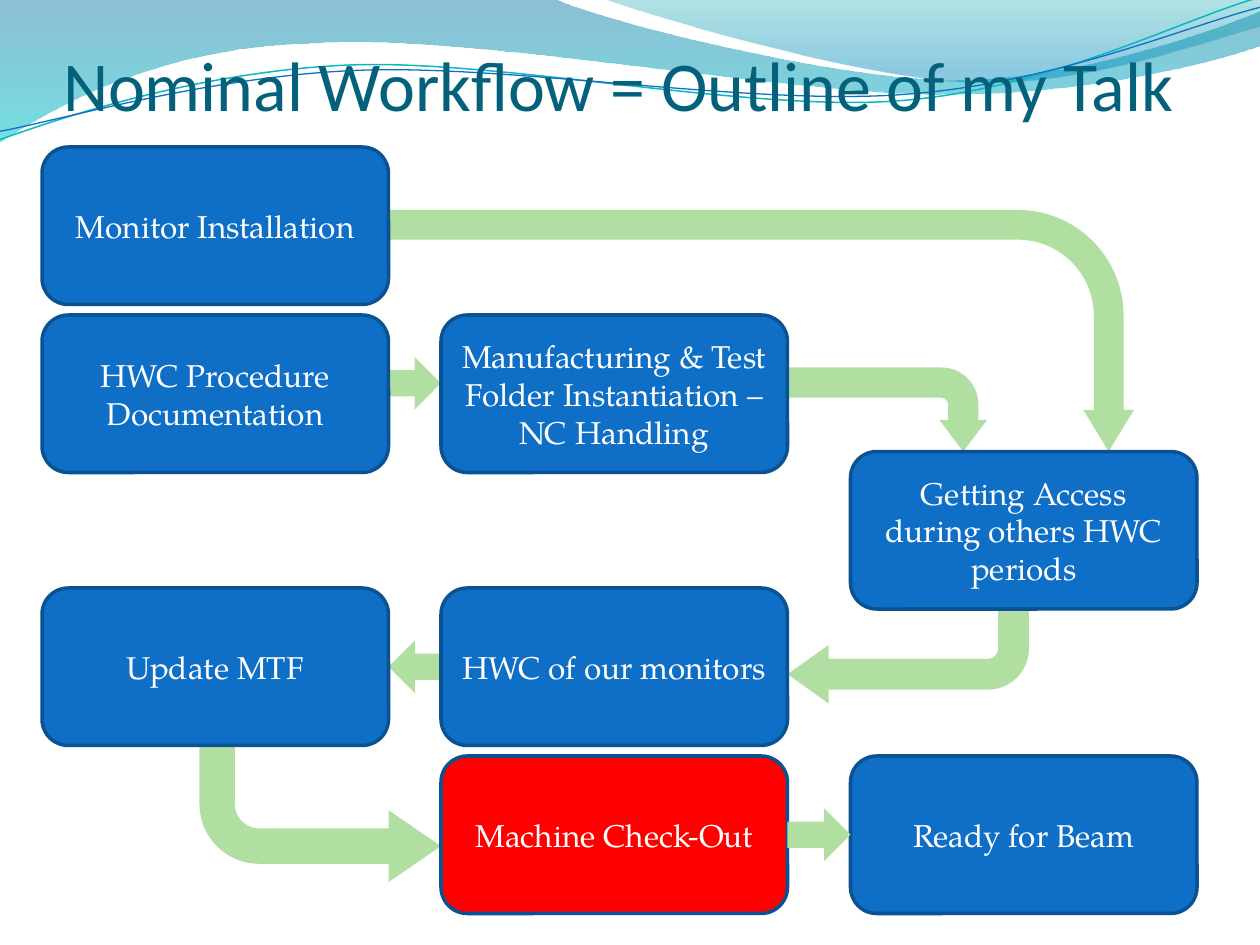
import dataclasses
import math

import lxml.etree
import pptx
import pptx.dml.color
import pptx.enum.shapes
import pptx.enum.text
import pptx.oxml.ns
import pptx.util

PX = 7620  # EMU per px, 120 px to the inch
SHAPE = pptx.enum.shapes.MSO_SHAPE


@dataclasses.dataclass(frozen=True)
class Theme:
    title: str = "04617B"
    step: str = "0F6FC6"
    current_step: str = "FF0000"
    step_border: str = "0B5292"
    step_text: str = "FFFFFF"
    arrow: str = "B0DFA1"
    teal_line: str = "0AB8BF"
    left_wave: tuple = ((0, "0074A1", 45), (1, "00C6CF", 55))
    right_wave: tuple = ((0, "00A1A9", 30), (0.8, "008BBF", 45))
    title_font: str = "Calibri"
    step_font: str = "TeX Gyre Pagella"
    title_size: int = 40
    step_size: int = 18


THEME = Theme()
STEP_W, STEP_H = 330, 150
COLUMNS = (40, 420, 810)
ROWS = (140, 300, 430, 560, 720)
# column, row, wording
STEPS = (
    (0, 0, "Monitor Installation"),
    (0, 1, "HWC Procedure Documentation"),
    (1, 1, "Manufacturing & Test Folder Instantiation – NC Handling"),
    (2, 2, "Getting Access during others HWC periods"),
    (1, 3, "HWC of our monitors"),
    (0, 3, "Update MTF"),
    (2, 4, "Ready for Beam"),
    (1, 4, "Machine Check-Out"),
)
CURRENT_STEP = "Machine Check-Out"
# box as seen, rotation, mirrored, adjustments
BENT_ARROWS = (
    ((370, 200, 710, 230), 90, False, (0.123, 0.105, 0.172, 0.438)),
    ((750, 350, 190, 80), 90, False, (0.36, 0.284, 0.375, 0.438)),
    ((750, 580, 230, 90), 180, False, (0.327, 0.31, 0.436, 0.438)),
    ((190, 710, 230, 130), 180, True, (0.259, 0.263, 0.383, 0.438)),
)
# Outlines in px: each step is one point (a line) or three (a Bezier curve)
LEFT_WAVE = (
    ((0, 0),), ((528, -1),),
    ((571, 20), (797, 76), (910, 76)), ((1024, 76), (1150, 31), (1200, 11)),
    ((1201, 43),),
    ((1180, 53), (1044, 91), (895, 90)), ((746, 90), (458, 34), (308, 41)),
    ((155, 43), (55, 100), (-1, 136)), ((0, 0),))
RIGHT_WAVE = (
    ((575, -1),),
    ((611, 13), (818, 74), (923, 78)), ((1027, 83), (1153, 38), (1200, 25)),
    ((1200, 0),), ((575, -1),))
TEAL_RIPPLE = (
    ((0, 133),), ((58, 112), (190, 68), (332, 62)),
    ((474, 56), (712, 107), (856, 96)), ((1000, 85), (1126, 18), (1198, -2)))
BLUE_RIPPLE = (
    ((0, 125),), ((56, 115), (197, 73), (340, 67)),
    ((484, 61), (716, 101), (860, 90)), ((1003, 80), (1129, 25), (1200, 7)))
RIPPLE_TILT = -2.7
RIPPLE_CENTER = (599, 70)


def rgb(color):
    return pptx.dml.color.RGBColor.from_string(color)


def untilt(point):
    """Where a ripple's point lies before the ripple is tilted."""
    angle = math.radians(-RIPPLE_TILT)
    dx, dy = (p - c for p, c in zip(point, RIPPLE_CENTER))
    return (RIPPLE_CENTER[0] + dx * math.cos(angle) - dy * math.sin(angle),
            RIPPLE_CENTER[1] + dx * math.sin(angle) + dy * math.cos(angle))


def add_outline(slide, box, steps, close):
    """Freeform whose three-point steps become Bezier curves."""
    left, top = box[:2]
    points = [((left + x) * PX, (top + y) * PX) for step in steps for x, y in step]
    builder = slide.shapes.build_freeform(*points[0])
    builder.add_line_segments(points[1:], close=close)
    outline = builder.convert_to_shape()
    outline.shadow.inherit = False
    lines = iter(list(outline._element.iter(pptx.oxml.ns.qn("a:lnTo"))))
    for step in steps[1:]:
        segment = [next(lines) for _ in step]
        if len(segment) == 3:
            curve = lxml.etree.Element(pptx.oxml.ns.qn("a:cubicBezTo"))
            segment[0].addprevious(curve)
            for line in segment:
                curve.append(line[0])
                line.getparent().remove(line)
    return outline


def add_wave(slide, box, steps, stops):
    wave = add_outline(slide, box, steps, close=True)
    wave.line.fill.background()
    wave.fill.gradient()
    wave.fill.gradient_angle = 270
    for stop, (position, color, _) in zip(wave.fill.gradient_stops, stops):
        stop.position = position
        stop.color.rgb = rgb(color)
    for color_xml, (_, _, opacity) in zip(
            wave._element.iter(pptx.oxml.ns.qn("a:srgbClr")), stops):
        lxml.etree.SubElement(color_xml, pptx.oxml.ns.qn("a:alpha"),
                              val=str(opacity * 1000))
    return wave


def add_ripple(slide, box, steps, color, width):
    upright = [[untilt(point) for point in step] for step in steps]
    ripple = add_outline(slide, box, upright, close=False)
    ripple.rotation = RIPPLE_TILT
    ripple.fill.background()
    ripple.line.color.rgb = rgb(color)
    ripple.line.width = pptx.util.Pt(width)
    return ripple


def add_wave_header(slide, box):
    """Waves are drawn on the slide, then moved to its master."""
    header = (
        add_wave(slide, box, LEFT_WAVE, THEME.left_wave),
        add_wave(slide, box, RIGHT_WAVE, THEME.right_wave),
        add_ripple(slide, box, TEAL_RIPPLE, THEME.teal_line, 0.85),
        add_ripple(slide, box, BLUE_RIPPLE, THEME.step, 0.75),
    )
    master_tree = slide.slide_layout.slide_master.shapes._spTree
    for number, part in enumerate(header):
        part._element.nvSpPr.cNvPr.set("id", str(101 + number))
        master_tree.insert(2 + number, part._element)


def style_text(paragraph, font, size, color):
    paragraph.font.name = font
    paragraph.font.size = pptx.util.Pt(size)
    paragraph.font.color.rgb = rgb(color)


def add_title(slide, box, wording):
    title = slide.shapes.title
    title.left, title.top, title.width, title.height = (n * PX for n in box)
    frame = title.text_frame
    frame.text = wording
    frame.vertical_anchor = pptx.enum.text.MSO_ANCHOR.BOTTOM
    frame.auto_size = pptx.enum.text.MSO_AUTO_SIZE.NONE
    frame.margin_left = frame.margin_right = frame.margin_bottom = 0
    frame.paragraphs[0].alignment = pptx.enum.text.PP_ALIGN.LEFT
    style_text(frame.paragraphs[0], THEME.title_font, THEME.title_size, THEME.title)


def add_filled(slide, preset, box, color):
    shape = slide.shapes.add_shape(preset, *(n * PX for n in box))
    shape.shadow.inherit = False
    shape.fill.solid()
    shape.fill.fore_color.rgb = rgb(color)
    return shape


def add_arrow(slide, preset, box, rotation=0, mirrored=False, adjustments=()):
    """Arrow that fills the box once it is turned."""
    left, top, width, height = box
    if rotation == 90:
        left, top = left + (width - height) // 2, top + (height - width) // 2
        width, height = height, width
    arrow = add_filled(slide, preset, (left, top, width, height), THEME.arrow)
    arrow.line.fill.background()
    arrow.rotation = rotation
    if mirrored:
        arrow._element.spPr.xfrm.set("flipH", "1")
    for index, value in enumerate(adjustments):
        arrow.adjustments[index] = value


def add_step(slide, box, wording):
    color = THEME.current_step if wording == CURRENT_STEP else THEME.step
    step = add_filled(slide, SHAPE.FLOWCHART_ALTERNATE_PROCESS, box, color)
    step.line.color.rgb = rgb(THEME.step_border)
    step.line.width = pptx.util.Pt(2)
    frame = step.text_frame
    frame.text = wording
    frame.word_wrap = True
    frame.vertical_anchor = pptx.enum.text.MSO_ANCHOR.MIDDLE
    frame.paragraphs[0].alignment = pptx.enum.text.PP_ALIGN.CENTER
    style_text(frame.paragraphs[0], THEME.step_font, THEME.step_size, THEME.step_text)


def add_workflow(slide, box):
    left, top = box[:2]
    for (x, y, width, height), *turn in BENT_ARROWS:
        add_arrow(slide, SHAPE.BENT_ARROW, (left + x, top + y, width, height), *turn)
    for y, rotation in ((340, 0), (610, 180)):
        add_arrow(slide, SHAPE.RIGHT_ARROW, (left + 370, top + y, 50, 50), rotation)
    for column, row, wording in STEPS:
        add_step(slide, (left + COLUMNS[column], top + ROWS[row], STEP_W, STEP_H), wording)
    add_arrow(slide, SHAPE.RIGHT_ARROW, (left + 750, top + 770, 60, 50))


deck = pptx.Presentation()
deck.slide_width, deck.slide_height = 1200 * PX, 900 * PX
workflow_slide = deck.slides.add_slide(deck.slide_layouts[5])
add_wave_header(workflow_slide, (0, 0, 1200, 136))
add_title(workflow_slide, (60, 10, 1080, 110), "Nominal Workflow = Outline of my Talk")
add_workflow(workflow_slide, (0, 0, 1200, 900))
deck.save("out.pptx")
